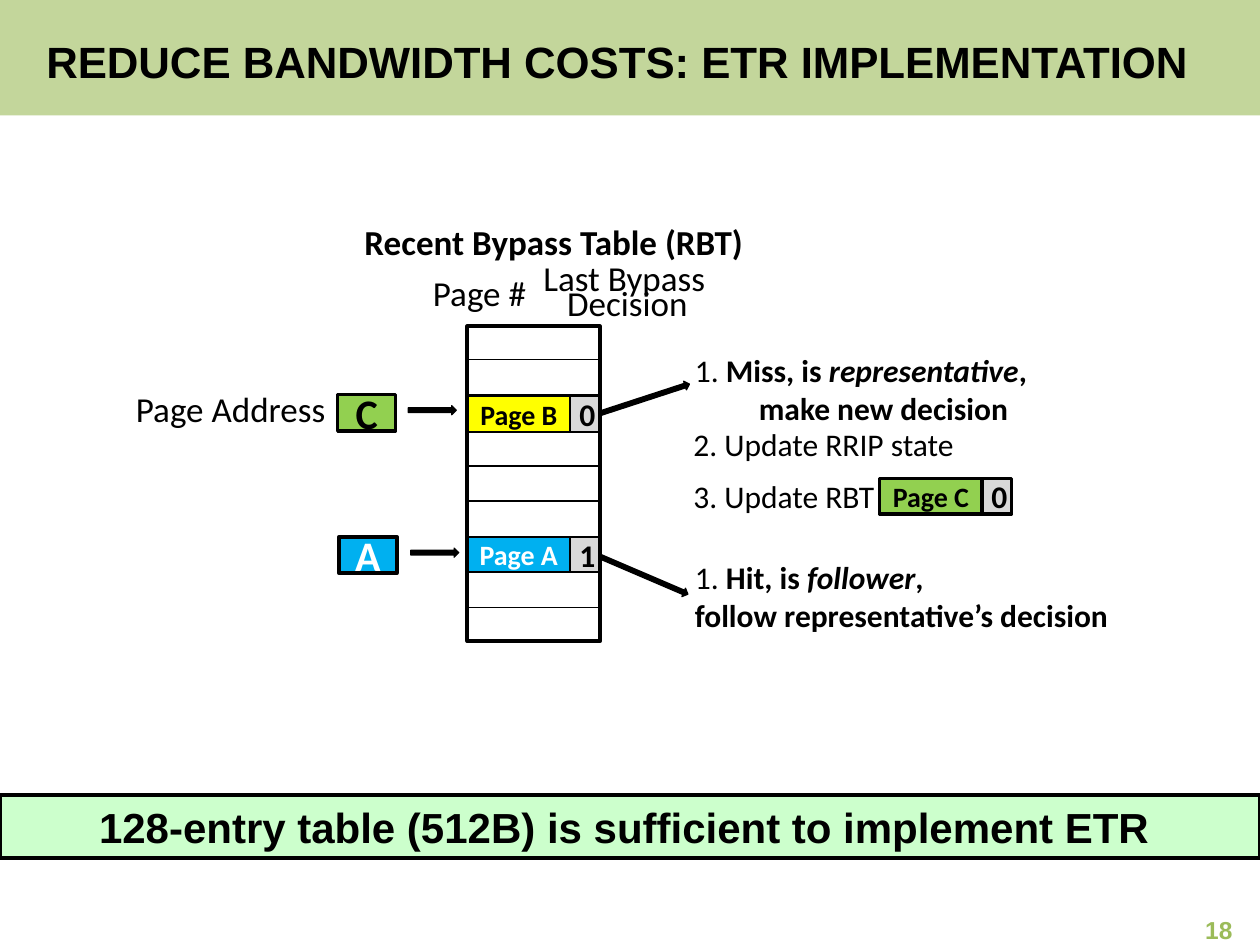
from dataclasses import dataclass, field

from pptx import Presentation
from pptx.dml.color import RGBColor
from pptx.enum.shapes import MSO_SHAPE as Preset
from pptx.enum.text import MSO_ANCHOR as Anchor, PP_ALIGN as Align
from pptx.util import Pt

BLACK, WHITE, GREY = "000000", "FFFFFF", "D9D9D9"
GREEN, BLUE, YELLOW = "92D050", "00B0F0", "FFFF00"
TIGHT = (5.2, 2.6)
ROOMY = (7.2, 3.6)
BOLD = {"bold": True}
BOLD_ITALIC = {"bold": True, "italic": True}

TABLE_LEFT, TABLE_TOP, TABLE_WIDTH, TABLE_HEIGHT = 267.1, 186.5, 75.6, 180
FIRST_ROW_TOP, ROW_HEIGHT = 205.5, 20.25
PAGE_WIDTH, DECISION_WIDTH = 58.7, 16.8
RULED_ROWS = (0, 1, 2, 3, 5, 6)


@dataclass
class Line:
    """One paragraph: (text, font format) runs and its layout."""
    runs: list[tuple[str, dict]]
    layout: dict = field(default_factory=dict)
    indent: float = 0


@dataclass
class Label:
    left: float
    top: float
    width: float
    height: float
    lines: list[Line]
    size: float = 20
    align: Align = Align.LEFT


@dataclass
class Entry:
    """A page and its bypass decision, as held in one table row."""
    left: float
    top: float
    page: str
    decision: str
    fill: str
    ink: str = BLACK
    border: float = 1


@dataclass
class Arrow:
    left: float
    top: float
    width: float
    rotation: float = 0


def rgb(value: str) -> RGBColor:
    return RGBColor.from_string(value)


def write(shape, lines: list[Line], size: float, align=Align.CENTER, ink=BLACK,
          font="Calibri", insets=TIGHT) -> None:
    frame = shape.text_frame
    side, edge = insets
    frame_format = {"word_wrap": True, "vertical_anchor": Anchor.MIDDLE,
                    "margin_left": Pt(side), "margin_right": Pt(side),
                    "margin_top": Pt(edge), "margin_bottom": Pt(edge)}
    for name, value in frame_format.items():
        setattr(frame, name, value)
    for number, line in enumerate(lines):
        paragraph = frame.add_paragraph() if number else frame.paragraphs[0]
        for name, value in {"alignment": align, **line.layout}.items():
            setattr(paragraph, name, value)
        if line.indent:
            paragraph._p.get_or_add_pPr().set("marL", str(Pt(line.indent)))
        for words, emphasis in line.runs:
            run = paragraph.add_run()
            run.text = words
            run.font.color.rgb = rgb(ink)
            font_format = {"name": font, "size": Pt(size), "bold": False, **emphasis}
            for name, value in font_format.items():
                setattr(run.font, name, value)


def draw_box(shapes, left: float, top: float, width: float, height: float,
             fill: str | None = None, border: float = 0, preset=Preset.RECTANGLE):
    box = shapes.add_shape(preset, Pt(left), Pt(top), Pt(width), Pt(height))
    box.shadow.inherit = False
    if fill:
        box.fill.solid()
        box.fill.fore_color.rgb = rgb(fill)
    else:
        box.fill.background()
    if border:
        box.line.color.rgb = rgb(BLACK)
        box.line.width = Pt(border)
    else:
        box.line.fill.background()
    return box


def draw_label(shapes, label: Label, **style) -> None:
    box = shapes.add_textbox(Pt(label.left), Pt(label.top),
                             Pt(label.width), Pt(label.height))
    write(box, label.lines, label.size, label.align, **style)


def draw_entry(shapes, entry: Entry) -> None:
    page = draw_box(shapes, entry.left, entry.top, PAGE_WIDTH, ROW_HEIGHT,
                    entry.fill, entry.border)
    write(page, [Line([(entry.page, BOLD)])], 16, ink=entry.ink)
    decision = draw_box(shapes, entry.left + PAGE_WIDTH, entry.top, DECISION_WIDTH,
                        ROW_HEIGHT, GREY, entry.border)
    write(decision, [Line([(entry.decision, BOLD)])], 18)


def draw_arrow(shapes, arrow: Arrow) -> None:
    shape = draw_box(shapes, arrow.left, arrow.top, arrow.width, 5.2, BLACK, 0.75,
                     Preset.RIGHT_ARROW)
    shape.rotation = arrow.rotation


def row_top(row: int) -> float:
    return FIRST_ROW_TOP + row * ROW_HEIGHT


STACKED = {"line_spacing": Pt(14.8)}
LABELS = [
    Label(67.7, 216.7, 128.2, 33.8, [Line([("Page Address", {})])], align=Align.CENTER),
    Label(305.3, 150.5, 111.6, 39.6, [Line([("Last Bypass", {})], STACKED),
                                      Line([("Decision", {})], STACKED, 13.6)]),
    Label(194.4, 122.4, 244.1, 31, [Line([("Recent Bypass Table (RBT)", BOLD)])],
          align=Align.CENTER),
    Label(226.1, 158.4, 95.8, 17.3, [Line([("Page #", {})])], align=Align.CENTER),
    Label(391.9, 208.8, 355.7, 26.6,
          [Line([("1. ", {}), ("Miss, is ", BOLD),
                 ("representative", BOLD_ITALIC), (",", BOLD)]),
           Line([("make new decision", BOLD)], indent=36.6)], 18),
    Label(391, 240.5, 205.2, 25.9, [Line([("2. Update RRIP state", {})])], 18),
    Label(391, 270.7, 205.2, 25.9, [Line([("3. Update RBT", {})])], 18),
    Label(391.9, 326.2, 308.9, 28.8,
          [Line([("1. ", {}), ("Hit, is ", BOLD),
                 ("follower", BOLD_ITALIC), (",", BOLD)]),
           Line([("follow representative’s decision", BOLD)])], 18),
]
ENTRIES = [
    Entry(TABLE_LEFT, row_top(1) + 0.9, "Page B", "0", YELLOW),
    Entry(TABLE_LEFT, row_top(5), "Page A", "1", BLUE, WHITE),
    Entry(502.6, 273.4, "Page C", "0", GREEN, border=2),
]
REQUESTS = [(193, 225.4, "C", GREEN, BLACK), (193.7, 306.7, "A", BLUE, WHITE)]
ARROWS = [
    Arrow(233.3, 231.8, 27.4),
    Arrow(234.7, 313.2, 27.4),
    Arrow(340.6, 225.4, 54.7, 341.9),
    Arrow(340.6, 326.2, 54.7, 23.2),
]
TITLE = Label(19.4, 15.8, 694.1, 38.2,
              [Line([("REDUCE BANDWIDTH COSTS: ETR IMPLEMENTATION", BOLD)])], 25)
PAGE_NUMBER = Label(543.6, 522, 167.8, 18.7, [Line([("18", BOLD)])], 14, Align.RIGHT)


def main() -> None:
    deck = Presentation()
    deck.slide_width, deck.slide_height = Pt(720), Pt(540)
    shapes = deck.slides.add_slide(deck.slide_layouts[6]).shapes

    draw_box(shapes, 0, 0, 720, 66, "C3D69B")
    draw_label(shapes, TITLE, font="Arial", insets=ROOMY)
    for row in RULED_ROWS:
        draw_box(shapes, TABLE_LEFT, row_top(row), TABLE_WIDTH, ROW_HEIGHT, border=1)
    for label in LABELS:
        draw_label(shapes, label)
    for left, top, page, fill, ink in REQUESTS:
        request = draw_box(shapes, left, top, 33.1, 20.9, fill, 2)
        write(request, [Line([(page, BOLD)])], 24, ink=ink)
    for arrow in ARROWS:
        draw_arrow(shapes, arrow)
    for entry in ENTRIES:
        draw_entry(shapes, entry)
    draw_box(shapes, TABLE_LEFT, TABLE_TOP, TABLE_WIDTH, TABLE_HEIGHT, border=2.25)

    conclusion = draw_box(shapes, 0, 454.3, 720, 36, "CCFFCC", 2.25)
    write(conclusion,
          [Line([("128-entry table (512B) is sufficient to implement ETR ", BOLD)])],
          24, font="Arial", insets=ROOMY)
    draw_label(shapes, PAGE_NUMBER, ink="9BBB59", font="Arial", insets=ROOMY)
    deck.save("out.pptx")


if __name__ == "__main__":
    main()
